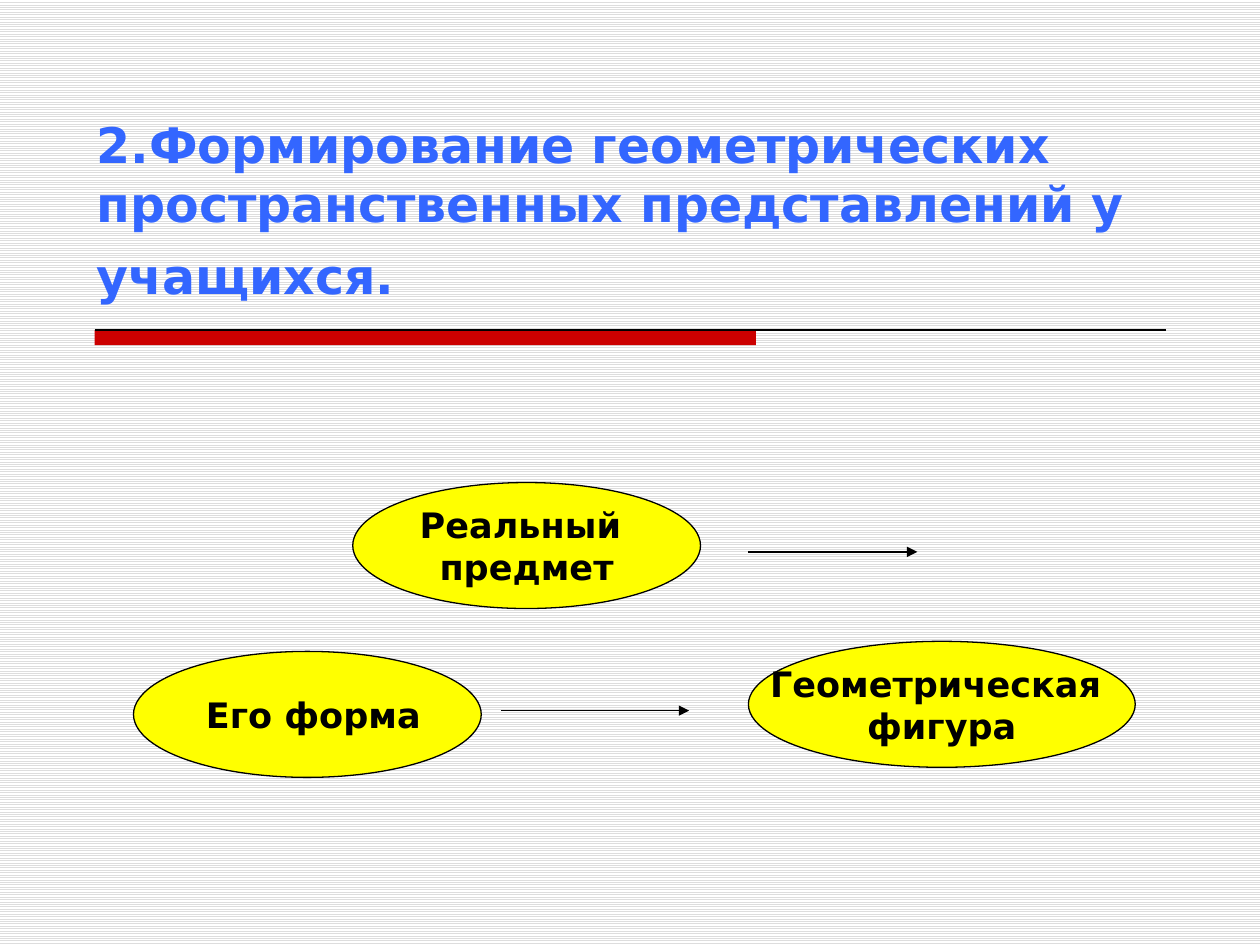
from dataclasses import dataclass

from lxml import etree
from pptx import Presentation
from pptx import util as u
from pptx.dml.color import RGBColor
from pptx.enum import dml, shapes, text
from pptx.oxml.ns import qn


@dataclass(frozen=True)
class Theme:
    font: str = "DejaVu Sans"
    title_size: int = 28
    title_end_size: int = 36
    label_size: int = 20
    line_width: float = 0.75
    title: str = "3366FF"
    ink: str = "000000"
    accent: str = "CC0000"
    node: str = "FFFF00"
    stripe: str = "DDDDDD"
    paper: str = "FFFFFF"


THEME = Theme()
COLUMNS, ROWS = 40, 30
WIDTH, HEIGHT = u.Inches(10), u.Inches(7.5)


def grid(column, row):
    """Turn grid columns and rows into slide lengths."""
    return round(WIDTH * column / COLUMNS), round(HEIGHT * row / ROWS)


def rgb(value):
    return RGBColor.from_string(value)


def add_span(para, words, size, color, bold=True):
    span = para.add_run()
    span.text = words
    span.font.name = THEME.font
    span.font.size = u.Pt(size)
    span.font.bold = bold
    span.font.color.rgb = rgb(color)


def paint_background(page):
    fill = page.background.fill
    fill.patterned()
    fill.pattern = dml.MSO_PATTERN.LIGHT_HORIZONTAL
    fill.fore_color.rgb = rgb(THEME.stripe)
    fill.back_color.rgb = rgb(THEME.paper)


def add_title(page, words, at, size):
    box = page.shapes.add_textbox(*grid(*at), *grid(*size))
    frame = box.text_frame
    frame.word_wrap = True
    frame.vertical_anchor = text.MSO_ANCHOR.BOTTOM
    para = frame.paragraphs[0]
    add_span(para, words, THEME.title_size, THEME.title)
    # The larger closing space sets the height of the last line.
    add_span(para, " ", THEME.title_end_size, THEME.ink, bold=False)


def add_filled(page, kind, at, size, color):
    shape = page.shapes.add_shape(kind, *grid(*at), *grid(*size))
    shape.shadow.inherit = False
    shape.fill.solid()
    shape.fill.fore_color.rgb = rgb(color)
    return shape


def add_line(page, start, end, arrow=False):
    line = page.shapes.add_connector(
        shapes.MSO_CONNECTOR.STRAIGHT, *grid(*start), *grid(*end))
    line.line.color.rgb = rgb(THEME.ink)
    line.line.width = u.Pt(THEME.line_width)
    properties = line._element.spPr
    if arrow:
        etree.SubElement(properties.find(qn("a:ln")), qn("a:tailEnd"), type="triangle")
    etree.SubElement(properties, qn("a:effectLst"))


def add_divider(page, at, bar_size, length):
    bar = add_filled(page, shapes.MSO_SHAPE.RECTANGLE, at, bar_size, THEME.accent)
    bar.line.fill.background()
    column, row = at
    add_line(page, at, (column + length, row))


def add_node(page, lines, at, size):
    node = add_filled(page, shapes.MSO_SHAPE.OVAL, at, size, THEME.node)
    node.line.color.rgb = rgb(THEME.ink)
    node.line.width = u.Pt(THEME.line_width)
    frame = node.text_frame
    frame.word_wrap = False
    frame.vertical_anchor = text.MSO_ANCHOR.MIDDLE
    for index, words in enumerate(lines):
        para = frame.add_paragraph() if index else frame.paragraphs[0]
        para.alignment = text.PP_ALIGN.CENTER
        add_span(para, words, THEME.label_size, THEME.ink)


def main():
    deck = Presentation()
    deck.slide_width, deck.slide_height = WIDTH, HEIGHT
    page = deck.slides.add_slide(deck.slide_layouts[6])
    paint_background(page)
    add_divider(page, at=(3, 10.48), bar_size=(21, 0.48), length=34)
    add_title(page, "2.Формирование геометрических пространственных "
              "представлений у учащихся.", at=(2.68, 3.96), size=(34, 6))

    node_size, wide_node_size = (11.04, 4), (12.28, 4)
    add_node(page, ["Реальный ", "предмет"], (11.2, 15.32), node_size)
    add_line(page, (23.76, 17.52), (29.12, 17.52), arrow=True)
    add_node(page, [" Его форма"], (4.24, 20.68), node_size)
    add_line(page, (15.92, 22.56), (21.88, 22.56), arrow=True)
    add_node(page, ["Геометрическая ", "фигура"], (23.76, 20.36), wide_node_size)
    deck.save("out.pptx")


if __name__ == "__main__":
    main()
